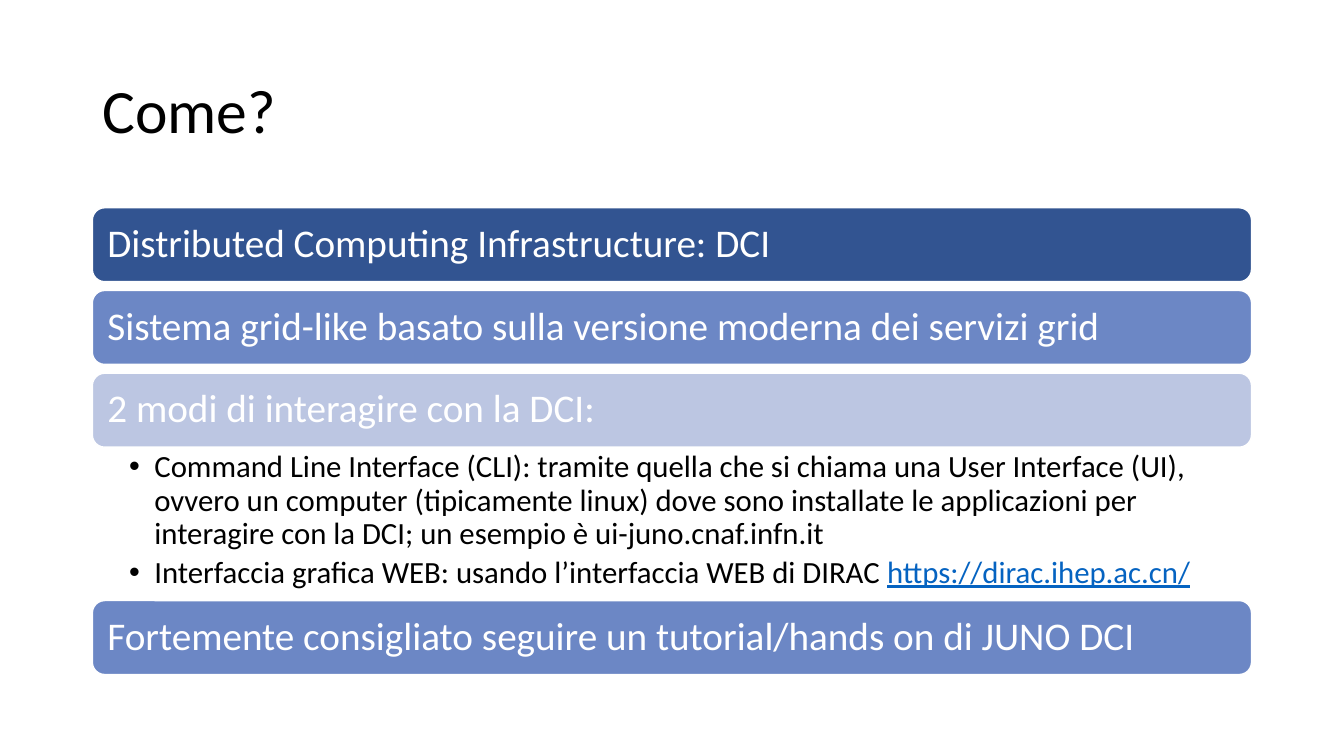
"""Build the "Come?" slide: a title, four bars and a bulleted list."""
from lxml.etree import SubElement
from pptx import Presentation
from pptx.dml.color import RGBColor
from pptx.enum.shapes import MSO_SHAPE as SHAPE
from pptx.enum.text import MSO_ANCHOR as ANCHOR, PP_ALIGN as ALIGN
from pptx.oxml.ns import qn
from pptx.util import Pt

LEFT, WIDE = 66, 828
BAR, STEP = 52.8, 59.1


def color(code):
    return RGBColor.from_string(code)


def write(para, text, size, code):
    para.alignment = ALIGN.LEFT
    para.line_spacing = 0.9
    run = para.add_run()
    run.text = text
    run.font.name = "Calibri"
    run.font.size = Pt(size)
    run.font.color.rgb = color(code)
    return run


deck = Presentation()
deck.slide_width, deck.slide_height = Pt(960), Pt(540)
slide = deck.slides.add_slide(deck.slide_layouts[6])
shapes = slide.shapes

title = shapes.add_textbox(Pt(LEFT), Pt(28.75), Pt(WIDE), Pt(104.4)).text_frame
title.word_wrap = True
title.vertical_anchor = ANCHOR.MIDDLE
write(title.paragraphs[0], "Come?", 44, "000000")

top = 148.4
bars = [
    (top, "325491", "Distributed Computing Infrastructure: DCI"),
    (top + STEP, "6C87C5", "Sistema grid-like basato sulla versione moderna dei servizi grid"),
    (top + 2 * STEP, "BCC6E2", "2 modi di interagire con la DCI:"),
    (429, "6C87C5", "Fortemente consigliato seguire un tutorial/hands on di JUNO DCI"),
]
for y, fill, text in bars:
    bar = shapes.add_shape(SHAPE.ROUNDED_RECTANGLE, Pt(LEFT), Pt(y), Pt(WIDE), Pt(BAR))
    bar.shadow.inherit = False
    bar.fill.solid()
    bar.fill.fore_color.rgb = color(fill)
    bar.line.color.rgb = color("FFFFFF")
    bar.line.width = Pt(1)
    frame = bar.text_frame
    frame.word_wrap = True
    frame.vertical_anchor = ANCHOR.MIDDLE
    frame.margin_left = frame.margin_right = Pt(8.2)
    write(frame.paragraphs[0], text, 28, "FFFFFF")

ways = shapes.add_textbox(Pt(LEFT), Pt(319.6), Pt(WIDE), Pt(109.4)).text_frame
ways.word_wrap = True
ways.margin_left, ways.margin_right = Pt(26.3), Pt(15.6)
ways.margin_top = ways.margin_bottom = Pt(2.8)
items = [
    [("Command Line Interface (CLI): tramite quella che si chiama una User Interface (UI), "
      "ovvero un computer (tipicamente linux) dove sono installate le applicazioni per "
      "interagire con la DCI; un esempio è ui-juno.cnaf.infn.it", "000000", False)],
    [("Interfaccia grafica WEB: usando l’interfaccia WEB di DIRAC ", "000000", False),
     ("https://dirac.ihep.ac.cn/", "0563C1", True)],
]
for i, item in enumerate(items):
    para = ways.paragraphs[0] if i == 0 else ways.add_paragraph()
    para.level = 1
    para.space_after = Pt(4)
    for text, code, under in item:
        run = write(para, text, 22, code)
        if under:
            run.font.underline = True
    props = para._p.get_or_add_pPr()
    props.set("marL", str(Pt(18)))
    props.set("indent", str(-Pt(18)))
    SubElement(props, qn("a:buFont"), typeface="Arial")
    SubElement(props, qn("a:buChar"), char="•")

deck.save("out.pptx")
